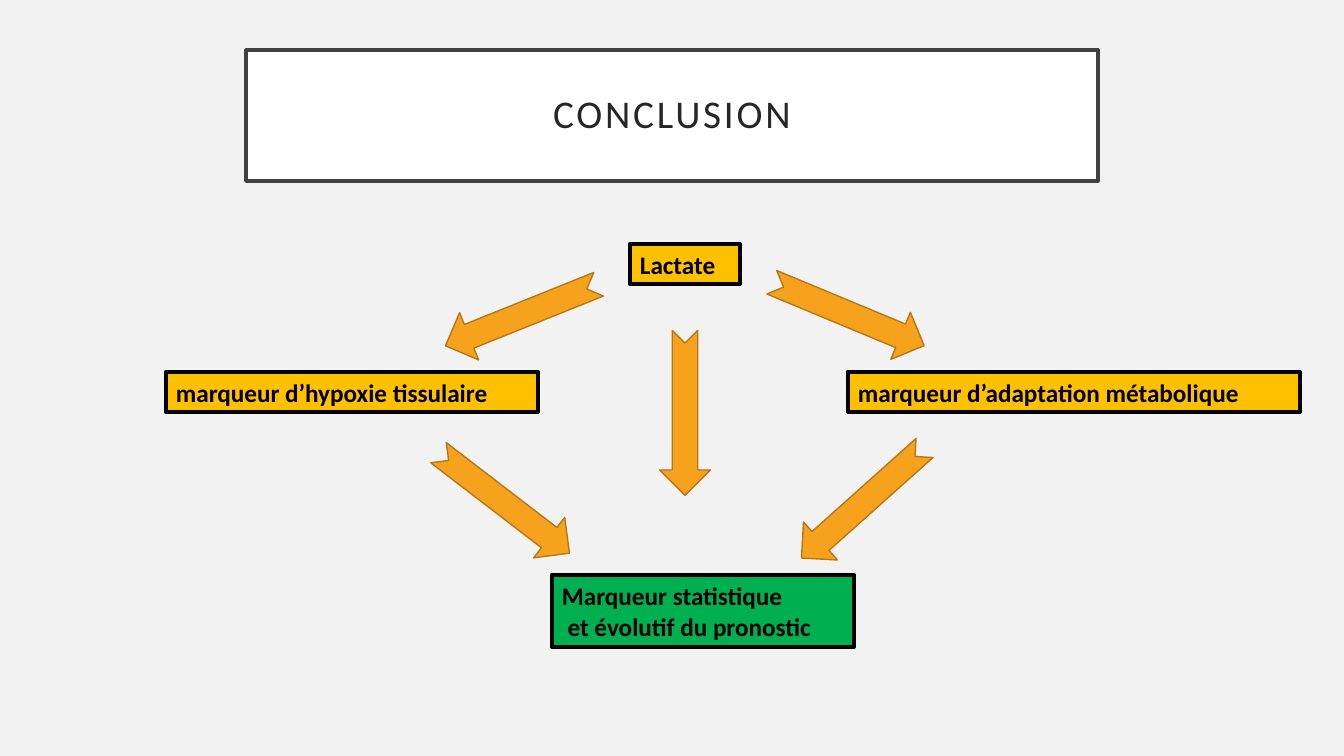
from pptx import Presentation
from pptx.dml.color import RGBColor
from pptx.enum.shapes import MSO_SHAPE as Shape
from pptx.enum.text import MSO_ANCHOR as Anchor, PP_ALIGN as Align
from pptx.util import Pt

COLORS = {
    "page": "F2F2F2", "white": "FFFFFF", "frame": "404040", "title": "262626",
    "amber": "FFC000", "green": "00B050", "black": "000000",
    "arrow": "F6A21D", "arrow_edge": "B67815",
}
FONT = "Calibri"
TITLE = ("CONCLUSION", (246, 50, 852, 131))
BOXES = [
    (["Lactate"], (630, 244, 110, 40), "amber"),
    (["marqueur d’hypoxie tissulaire"], (166, 372, 372, 40), "amber"),
    (["marqueur d’adaptation métabolique"], (848, 372, 452, 40), "amber"),
    (["Marqueur statistique", " et évolutif du pronostic"], (552, 575, 302, 72), "green"),
]
ARROW_SIZE = (165, 51)
ARROWS = [
    ((522, 315), 158.1),
    ((848, 314), 22.6),
    ((685, 413), 90),
    ((504, 503), 37.5),
    ((863, 503), 138.2),
]
PAGE_SIZE = (1344, 756)
EMU_PER_PX = 12192000 / PAGE_SIZE[0]


def px(length):
    return round(length * EMU_PER_PX)


def color(name):
    return RGBColor.from_string(COLORS[name])


def add_block(page, kind, area, fill, edge, weight):
    block = page.shapes.add_shape(kind, *map(px, area))
    block.shadow.inherit = False
    block.fill.solid()
    block.fill.fore_color.rgb = color(fill)
    block.line.color.rgb = color(edge)
    block.line.width = Pt(weight)
    return block


def write(block, lines, size, ink, align, bold=False):
    frame = block.text_frame
    frame.word_wrap = True
    frame.vertical_anchor = Anchor.MIDDLE
    frame.text = "\n".join(lines)
    for para in frame.paragraphs:
        para.alignment = align
        para.font.name = FONT
        para.font.size = Pt(size)
        para.font.bold = bold
        para.font.color.rgb = color(ink)
    return frame


def main():
    deck = Presentation()
    deck.slide_width, deck.slide_height = map(px, PAGE_SIZE)
    page = deck.slides.add_slide(deck.slide_layouts[6])
    page.background.fill.solid()
    page.background.fill.fore_color.rgb = color("page")

    text, area = TITLE
    title = add_block(page, Shape.RECTANGLE, area, "white", "frame", 2.5)
    para = write(title, [text], 28, "title", Align.CENTER).paragraphs[0]
    para.line_spacing = 0.9
    para.runs[0].font._element.set("spc", "200")

    for lines, area, fill in BOXES:
        box = add_block(page, Shape.RECTANGLE, area, fill, "black", 3)
        write(box, lines, 18, "black", Align.LEFT, bold=True)

    width, height = ARROW_SIZE
    for (x, y), angle in ARROWS:
        area = (x - width / 2, y - height / 2, width, height)
        arrow = add_block(page, Shape.NOTCHED_RIGHT_ARROW, area, "arrow", "arrow_edge", 1)
        arrow.rotation = angle

    deck.save("out.pptx")


if __name__ == "__main__":
    main()
